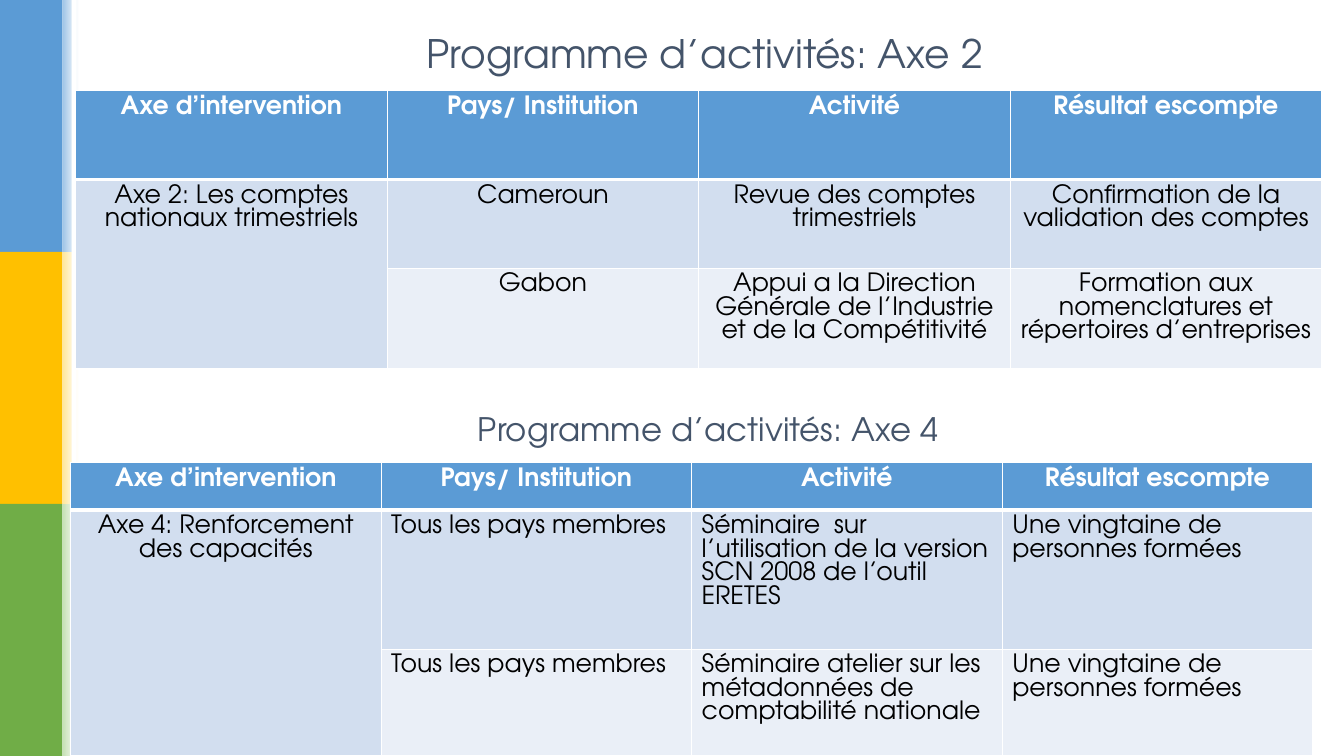
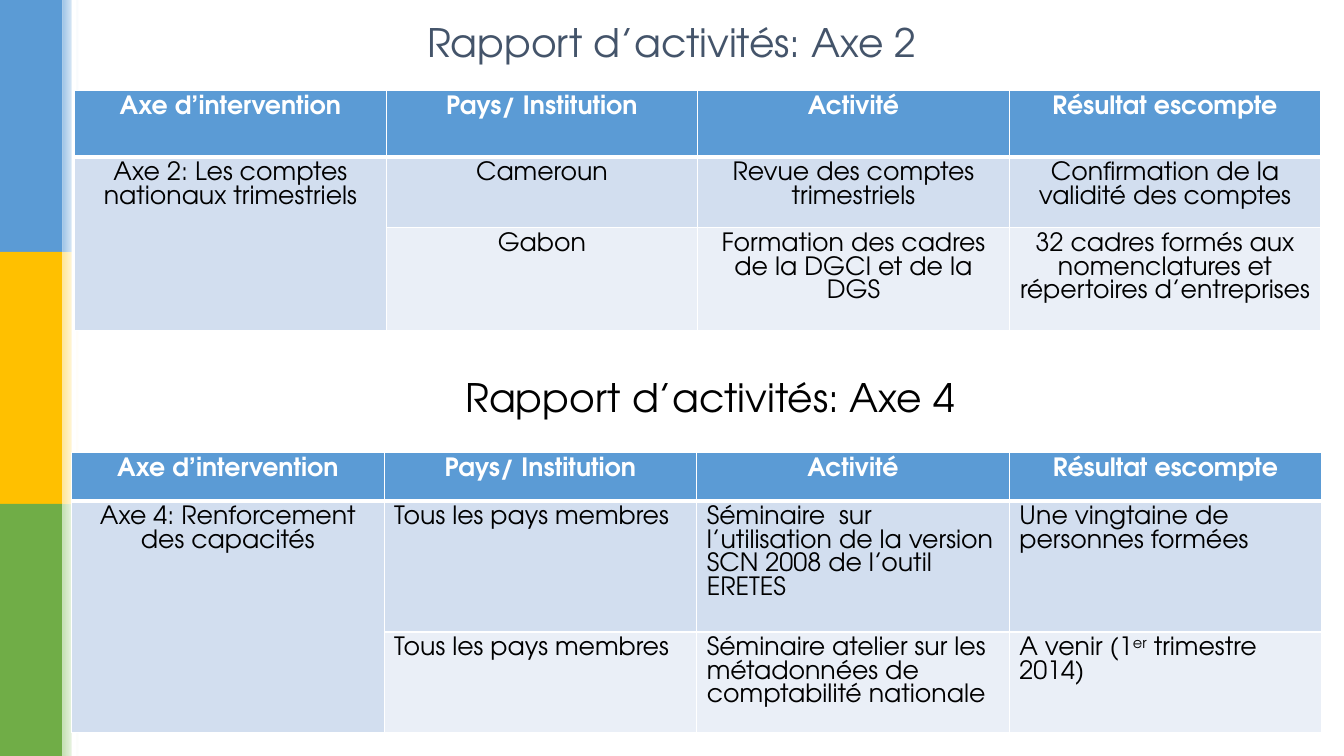
from lxml import etree
from pptx import Presentation
from pptx.dml.color import RGBColor
from pptx.enum.shapes import MSO_SHAPE
from pptx.enum.text import MSO_ANCHOR, PP_ALIGN
from pptx.oxml.ns import qn
from pptx.util import Inches, Pt

RECT = MSO_SHAPE.RECTANGLE
MIDDLE = MSO_ANCHOR.MIDDLE
LEFT, CENTER = PP_ALIGN.LEFT, PP_ALIGN.CENTER

WHITE = RGBColor(0xFF, 0xFF, 0xFF)
BLACK = RGBColor(0, 0, 0)
SLATE = RGBColor(0x44, 0x54, 0x6A)
BLUE = RGBColor(0x5B, 0x9B, 0xD5)
LIGHT_BLUE = RGBColor(0x9D, 0xC3, 0xE6)
YELLOW = RGBColor(0xFF, 0xC0, 0x00)
LIGHT_YELLOW = RGBColor(0xFF, 0xE6, 0x99)
GREEN = RGBColor(0x70, 0xAD, 0x47)
LIGHT_GREEN = RGBColor(0xC5, 0xE0, 0xB4)
ROW_DARK = RGBColor(0xD2, 0xDE, 0xEF)
ROW_LIGHT = RGBColor(0xEA, 0xEF, 0xF7)

FONT = "TeX Gyre Adventor"
BANDS = [(BLUE, LIGHT_BLUE), (YELLOW, LIGHT_YELLOW), (GREEN, LIGHT_GREEN)]
ROW_FILLS = [BLUE, ROW_DARK, ROW_LIGHT]
HEADER = ["Axe d’intervention", "Pays/ Institution", "Activité", "Résultat escompte"]
AXIS_2 = "Axe 2: Les comptes nationaux trimestriels"
AXIS_4 = "Axe 4: Renforcement des capacités"
MEMBERS = "Tous les pays membres"
TRAINED = "Une vingtaine de personnes formées"
SEMINAR = "Séminaire  sur l’utilisation de la version SCN 2008 de l’outil ERETES"
WORKSHOP = "Séminaire atelier sur les métadonnées de comptabilité nationale"


def write(tf, text, size=18, color=BLACK, bold=False, align=CENTER, spacing=None):
    """Write one paragraph; the part between two ^ marks is superscript."""
    p = tf.paragraphs[0]
    p.alignment = align
    if spacing:
        p.line_spacing = spacing
    for i, part in enumerate(text.split("^")):
        r = p.add_run()
        r.text = part
        r.font.name = FONT
        r.font.size = Pt(size)
        r.font.bold = bold
        r.font.color.rgb = color
        if i % 2:
            r.font._element.set("baseline", "30000")


def set_borders(cell, **widths):
    """Give the cell white borders; widths are points by side L, R, T, B."""
    tc_pr = cell._tc.get_or_add_tcPr()
    for side in "LRTB":
        ln = etree.SubElement(tc_pr, qn(f"a:ln{side}"), w=str(Pt(widths.get(side, 1))))
        fill = etree.SubElement(ln, qn("a:solidFill"))
        etree.SubElement(fill, qn("a:srgbClr"), val=str(WHITE))


class Deck:
    def __init__(self):
        self.prs = Presentation()
        self.prs.slide_width = Inches(13.33)
        self.prs.slide_height = Inches(7.5)
        self.s = None

    def slide(self):
        self.s = self.prs.slides.add_slide(self.prs.slide_layouts[6])
        for i, (color, tint) in enumerate(BANDS):
            self.rect(0, 2.5 * i, 0.62, 2.5, color)
            self.rect(0.62, 2.5 * i, 0.16, 2.5, tint, fade=True)
        self.rect(0.71, 0, 0.05, 7.5, WHITE)

    def rect(self, x, y, w, h, color, fade=False):
        """Draw a borderless rectangle, fading to white on the right if asked."""
        sp = self.s.shapes.add_shape(RECT, Inches(x), Inches(y), Inches(w), Inches(h))
        sp.shadow.inherit = False
        sp.line.fill.background()
        if fade:
            sp.fill.gradient()
            sp.fill.gradient_angle = 0
            for stop, stop_color in zip(sp.fill.gradient_stops, (color, WHITE)):
                stop.color.rgb = stop_color
        else:
            sp.fill.solid()
            sp.fill.fore_color.rgb = color

    def title(self, text, x, y, w, h, size=28, color=SLATE, spacing=None):
        sp = self.s.shapes.add_textbox(Inches(x), Inches(y), Inches(w), Inches(h))
        tf = sp.text_frame
        tf.word_wrap = True
        tf.vertical_anchor = MIDDLE
        write(tf, text, size=size, color=color, spacing=spacing)

    def table(self, x, y, col_width, heights, axis, rows, align=CENTER):
        """Draw the header and two rows that share the axis cell on the left."""
        cells = [HEADER, [axis, *rows[0]], ["", *rows[1]]]
        frame = self.s.shapes.add_table(
            len(cells), len(HEADER), Inches(x), Inches(y),
            Inches(col_width * len(HEADER)), Inches(sum(heights)))
        table = frame.table
        table.horz_banding = False
        for column in table.columns:
            column.width = Inches(col_width)
        for i, (row, height) in enumerate(zip(cells, heights)):
            table.rows[i].height = Inches(height)
            for j, text in enumerate(row):
                cell = table.cell(i, j)
                set_borders(cell, T=3 if i == 1 else 1, B=3 if i == 0 else 1)
                cell.fill.solid()
                cell.fill.fore_color.rgb = ROW_FILLS[i]
                if text:
                    write(cell.text_frame, text, bold=i == 0,
                          color=BLACK if i else WHITE,
                          align=align if i and j else CENTER)
        table.cell(1, 0).merge(table.cell(2, 0))


def main():
    deck = Deck()

    deck.slide()
    deck.title("Programme d’activités: Axe 2", 0.92, 0.21, 12.14, 0.62)
    deck.table(0.75, 0.9, 3.09, [0.88, 0.88, 0.88], AXIS_2, [
        ["Cameroun", "Revue des comptes trimestriels",
         "Confirmation de la validation des comptes"],
        ["Gabon", "Appui a la Direction Générale de l’Industrie et de la Compétitivité",
         "Formation aux nomenclatures et répertoires d’entreprises"],
    ])
    deck.title("Programme d’activités: Axe 4", 0.72, 4.08, 12.61, 0.41,
               size=23.1, spacing=0.8)
    deck.table(0.7, 4.59, 3.08, [0.47, 1.38, 1.06], AXIS_4, [
        [MEMBERS, SEMINAR, TRAINED],
        [MEMBERS, WORKSHOP, TRAINED],
    ], align=LEFT)

    deck.slide()
    deck.title("Rapport d’activités: Axe 2", 0, 0, 13.33, 0.82)
    deck.title("Rapport d’activités: Axe 4", 0.76, 3.71, 12.57, 0.46, color=BLACK)
    deck.table(0.74, 0.9, 3.09, [0.66, 0.66, 1.02], AXIS_2, [
        ["Cameroun", "Revue des comptes trimestriels",
         "Confirmation de la validité des comptes"],
        ["Gabon", "Formation des cadres de la DGCI et de la DGS",
         "32 cadres formés aux nomenclatures et répertoires d’entreprises"],
    ])
    deck.table(0.71, 4.49, 3.1, [0.48, 1.24, 0.96], AXIS_4, [
        [MEMBERS, SEMINAR, TRAINED],
        [MEMBERS, WORKSHOP, "A venir (1^er^ trimestre 2014)"],
    ], align=LEFT)

    deck.prs.save("out.pptx")


if __name__ == "__main__":
    main()
